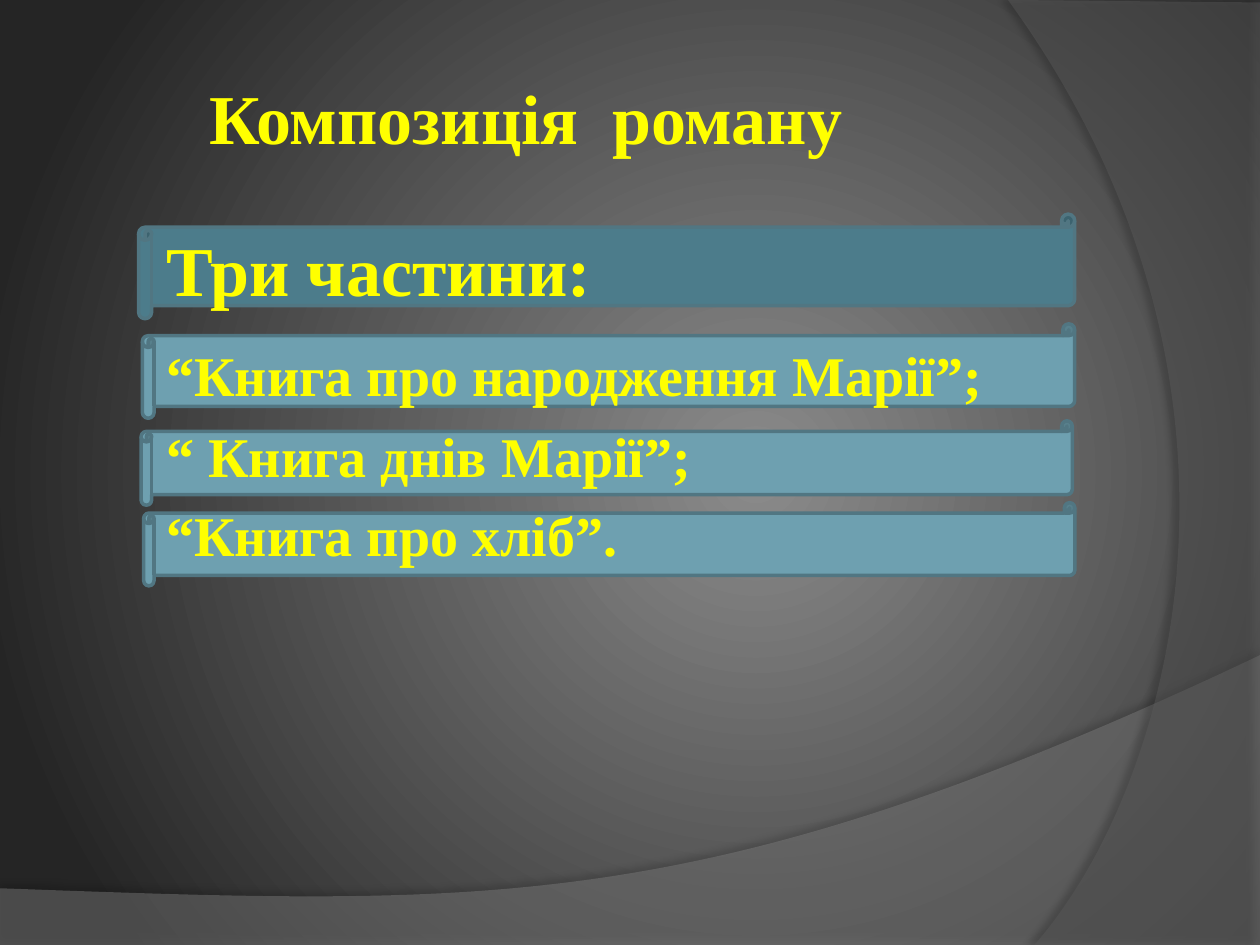
"""Build the slide on the three-part composition of the novel."""
from lxml.etree import SubElement as Sub
from pptx import Presentation
from pptx.dml.color import RGBColor
from pptx.enum.shapes import MSO_SHAPE as Kind
from pptx.enum.text import MSO_ANCHOR as Anchor
from pptx.oxml.ns import qn
from pptx.util import Inches, Pt

TITLE = [("Композиція\tроману", 40, 0)]
PARTS = [
    ("Три частини:", 40, 0),
    ("“Книга про народження Марії”;", 32, 17),
    ("“ Книга днів Марії”;", 32, 8),
    ("“Книга про хліб”.", 32, 6.5),
]
SCROLLS = [
    (1.14, 3.99, 7.39, 0.66, "6EA0B0"),
    (1.12, 3.34, 7.39, 0.67, "6EA0B0"),
    (1.13, 2.57, 7.4, 0.75, "6EA0B0"),
    (1.1, 1.7, 7.43, 0.83, "4C7C8B"),
]
WAVES = [
    dict(edge=[(0, 7.5), (10, 7.5), (10, 5.2)], pulls=[(5.59, 7.29), (3.91, 7.19)], end=(0, 7.05),
         color="7F7F7F", alpha=45, shade=35, dist=3.5, angle=270),
    dict(edge=[(10, 0.02), (10, 7.5), (8.21, 7.5)], pulls=[(9.35, 6.19), (10.18, 3)], end=(8, 0),
         color="5E5E5E", alpha=40, shade=45, dist=4, angle=180),
]
GLOW = [(0, "8B8B8B"), (100, "252525")]
FOCUS = dict(l=60, t=50, r=40, b=50)


def rgb(code):
    return RGBColor.from_string(code)


def add(node, tag, **attrs):
    return Sub(node, qn("a:" + tag), {key: str(val) for key, val in attrs.items()})


def glow(slide):
    fill = slide.background.fill
    fill.gradient()
    for stop, (pos, code) in zip(fill.gradient_stops, GLOW):
        stop.position = pos / 100
        stop.color.rgb = rgb(code)
    grad = slide.element.find(".//" + qn("a:gradFill"))
    grad.remove(grad.find(qn("a:lin")))
    ring = add(grad, "path", path="circle")
    add(ring, "fillToRect", **{side: val * 1000 for side, val in FOCUS.items()})


def bend(shape, points):
    trace = shape.element.find(".//" + qn("a:path"))
    last = trace.findall(qn("a:lnTo"))[-1]
    curve = add(trace, "cubicBezTo")
    for x, y in points:
        add(curve, "pt", x=Inches(x) - shape.left, y=Inches(y) - shape.top)
    trace.replace(last, curve)


def wave(slide, edge, pulls, end, color, alpha, shade, dist, angle):
    dots = [(Inches(x), Inches(y)) for x, y in [*edge, end]]
    form = slide.shapes.build_freeform(*dots[0])
    form.add_line_segments(dots[1:], close=True)
    shape = form.convert_to_shape()
    bend(shape, [*pulls, end])
    shape.fill.solid()
    shape.fill.fore_color.rgb = rgb(color)
    shape.line.fill.background()
    props = shape.element.spPr
    add(props.find(".//" + qn("a:srgbClr")), "alpha", val=alpha * 1000)
    shape.shadow.inherit = False
    drop = add(props.find(qn("a:effectLst")), "outerShdw", blurRad=Pt(4), dist=Pt(dist),
               dir=angle * 60000, algn="ctr", rotWithShape=0)
    add(add(drop, "srgbClr", val="000000"), "alpha", val=shade * 1000)


def scroll(slide, x, y, w, h, color):
    shape = slide.shapes.add_shape(Kind.HORIZONTAL_SCROLL, *map(Inches, (x, y, w, h)))
    shape.shadow.inherit = False
    shape.fill.solid()
    shape.fill.fore_color.rgb = rgb(color)
    shape.line.color.rgb = rgb("517682")
    shape.line.width = Pt(2)


def write(slide, lines, x, y, w, h, anchor=Anchor.TOP, tab=None, color="FFFF00",
          face="Times New Roman"):
    frame = slide.shapes.add_textbox(*map(Inches, (x, y, w, h))).text_frame
    frame.word_wrap = True
    frame.vertical_anchor = anchor
    frame.margin_left = frame.margin_right = 0
    for i, (text, size, gap) in enumerate(lines):
        para = frame.add_paragraph() if i else frame.paragraphs[0]
        para.space_before = Pt(gap)
        if tab:
            stops = add(para._p.get_or_add_pPr(), "tabLst")
            add(stops, "tab", pos=Inches(tab), algn="l")
        run = para.add_run()
        run.text = text
        font = run.font
        font.name, font.size, font.bold = face, Pt(size), True
        font.color.rgb = rgb(color)


def main():
    deck = Presentation()
    deck.slide_width, deck.slide_height = Inches(10), Inches(7.5)
    slide = deck.slides.add_slide(deck.slide_layouts[6])
    glow(slide)
    for item in WAVES:
        wave(slide, **item)
    for item in SCROLLS:
        scroll(slide, *item)
    write(slide, TITLE, 1.66, 0.3, 7, 1.25, anchor=Anchor.MIDDLE, tab=3.2)
    write(slide, PARTS, 1.32, 1.75, 7.35, 4.95)
    deck.save("out.pptx")


if __name__ == "__main__":
    main()
